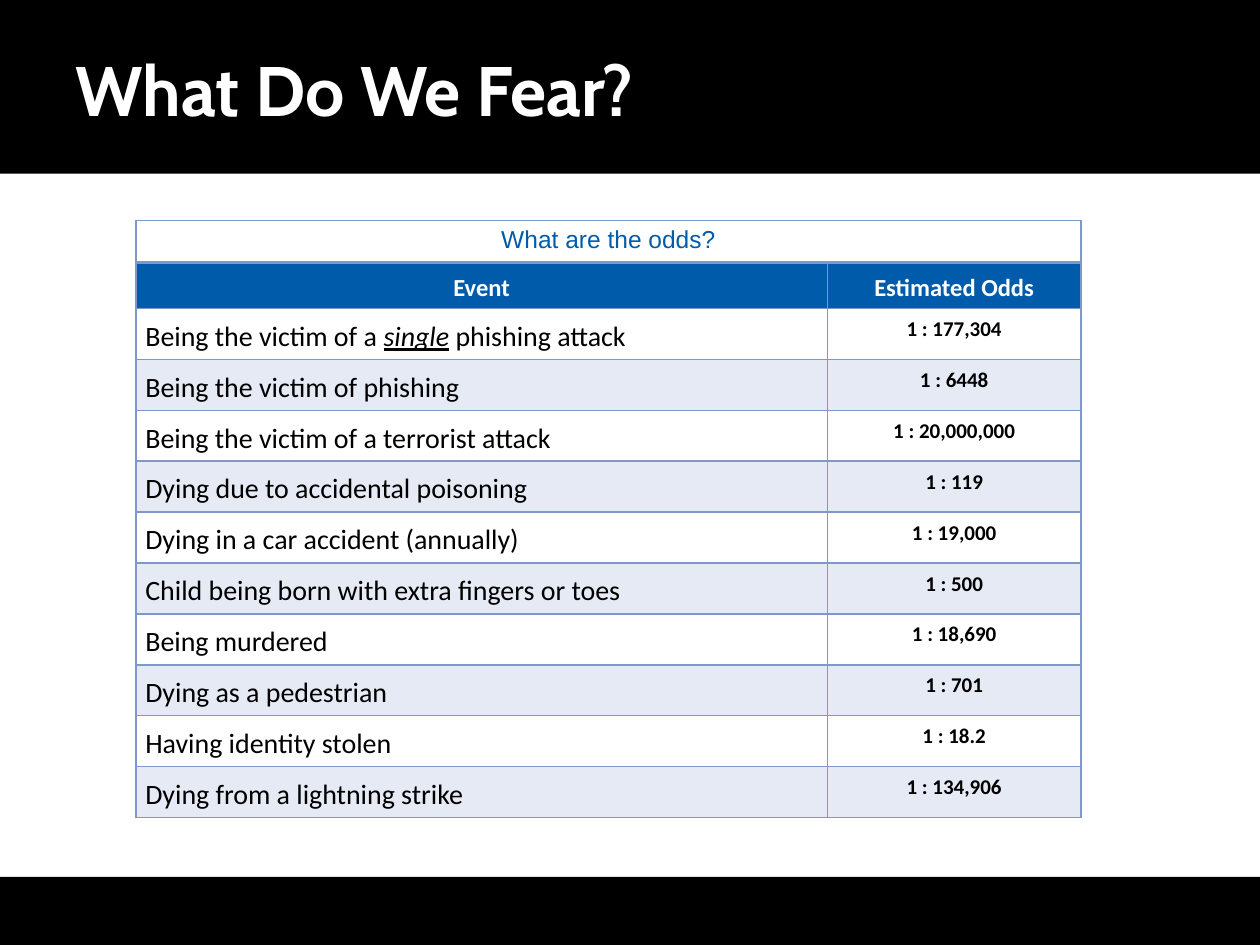
from lxml.etree import SubElement
from pptx import Presentation
from pptx.dml.color import RGBColor
from pptx.enum.shapes import MSO_SHAPE as SHAPE
from pptx.enum.text import MSO_ANCHOR as ANCHOR, PP_ALIGN as ALIGN
from pptx.oxml.ns import qn
from pptx.util import Cm, Pt

BLACK, WHITE, BLUE, RULE = "000000", "FFFFFF", "005CAB", "7F97CD"
ODDS = [
    (["Being the victim of a ", "single", " phishing attack"], "1 : 177,304"),
    (["Being the victim of phishing"], "1 : 6448"),
    (["Being the victim of a terrorist attack"], "1 : 20,000,000"),
    (["Dying due to accidental poisoning"], "1 : 119"),
    (["Dying in a car accident (annually)"], "1 : 19,000"),
    (["Child being born with extra fingers or toes"], "1 : 500"),
    (["Being murdered"], "1 : 18,690"),
    (["Dying as a pedestrian"], "1 : 701"),
    (["Having identity stolen"], "1 : 18.2"),
    (["Dying from a lightning strike"], "1 : 134,906"),
]


def paint(target, color):
    target.solid()
    target.fore_color.rgb = RGBColor.from_string(color)


def write(p, text, size=14, font="Calibri", color=BLACK, bold=False,
          stress=False, align=ALIGN.LEFT, spacing=None):
    p.alignment = align
    if spacing:
        p.line_spacing = spacing
    r = p.add_run()
    r.text = text
    f = r.font
    f.name, f.size, f.bold = font, Pt(size), bold
    f.italic = f.underline = stress
    paint(f.fill, color)


class Deck:
    def __init__(self):
        self.prs = Presentation()
        self.prs.slide_width, self.prs.slide_height = Cm(25.4), Cm(19.05)
        self.s = self.prs.slides.add_slide(self.prs.slide_layouts[6])
        paint(self.s.background.fill, WHITE)

    def band(self, top, height):
        sp = self.s.shapes.add_shape(
            SHAPE.RECTANGLE, 0, Cm(top), self.prs.slide_width, Cm(height))
        sp.shadow.inherit = False
        paint(sp.fill, BLACK)
        sp.line.fill.background()

    def title(self, text):
        tf = self.s.shapes.add_textbox(
            Cm(1.27), Cm(0.2), Cm(22.86), Cm(3.18)).text_frame
        tf.word_wrap = True
        tf.vertical_anchor = ANCHOR.MIDDLE
        write(tf.paragraphs[0], text, size=40, font="Cabin",
              color=WHITE, bold=True)

    def table(self, left, top, widths, heights):
        tbl = self.s.shapes.add_table(
            len(heights), len(widths), Cm(left), Cm(top),
            Cm(sum(widths)), Cm(sum(heights))).table
        tbl.first_row = tbl.horz_banding = False
        for col, width in zip(tbl.columns, widths):
            col.width = Cm(width)
        for row, height in zip(tbl.rows, heights):
            row.height = Cm(height)
        return tbl

    def cell(self, cell, fill=None, alpha=None, bottom=0.96, top=0.96, inset=True):
        if inset:
            cell.margin_left = cell.margin_right = Cm(0.19)
        pr = cell._tc.get_or_add_tcPr()
        for side, width in zip("LRTB", (0.96, 0.96, top, bottom)):
            ln = SubElement(pr, qn(f"a:ln{side}"), w=str(Pt(width)))
            SubElement(SubElement(ln, qn("a:solidFill")), qn("a:srgbClr"), val=RULE)
        if not fill:
            cell.fill.background()
            return cell.text_frame.paragraphs[0]
        paint(cell.fill, fill)
        if alpha:
            clr = pr.find(qn("a:solidFill")).find(qn("a:srgbClr"))
            SubElement(clr, qn("a:alpha"), val=str(alpha * 1000))
        return cell.text_frame.paragraphs[0]

    def odds_table(self):
        tbl = self.table(2.74, 4.44, [13.94, 5.11],
                         [0.82, 0.84] + [0.88] * len(ODDS))
        tbl.cell(0, 0).merge(tbl.cell(0, 1))
        caption, _ = [self.cell(tbl.cell(0, i), bottom=1.98, inset=False)
                      for i in range(2)]
        write(caption, "What are the odds?", font="Arial", color=BLUE,
              align=ALIGN.CENTER)
        for i, text in enumerate(["Event", "Estimated Odds"]):
            write(self.cell(tbl.cell(1, i), BLUE, top=1.98), text, color=WHITE,
                  bold=True, align=ALIGN.CENTER, spacing=1.14)
        for row, (event, odds) in enumerate(ODDS, start=2):
            shade = (RULE, 20) if row % 2 else ()
            p = self.cell(tbl.cell(row, 0), *shade)
            for i, text in enumerate(event):
                write(p, text, size=16, stress=i == 1, spacing=1.14)
            write(self.cell(tbl.cell(row, 1), *shade), odds, size=12, bold=True,
                  align=ALIGN.CENTER, spacing=1.07)


def main():
    deck = Deck()
    deck.band(17.68, 1.37)
    deck.band(0, 3.5)
    deck.title("What Do We Fear?")
    deck.odds_table()
    deck.prs.save("out.pptx")


if __name__ == "__main__":
    main()
